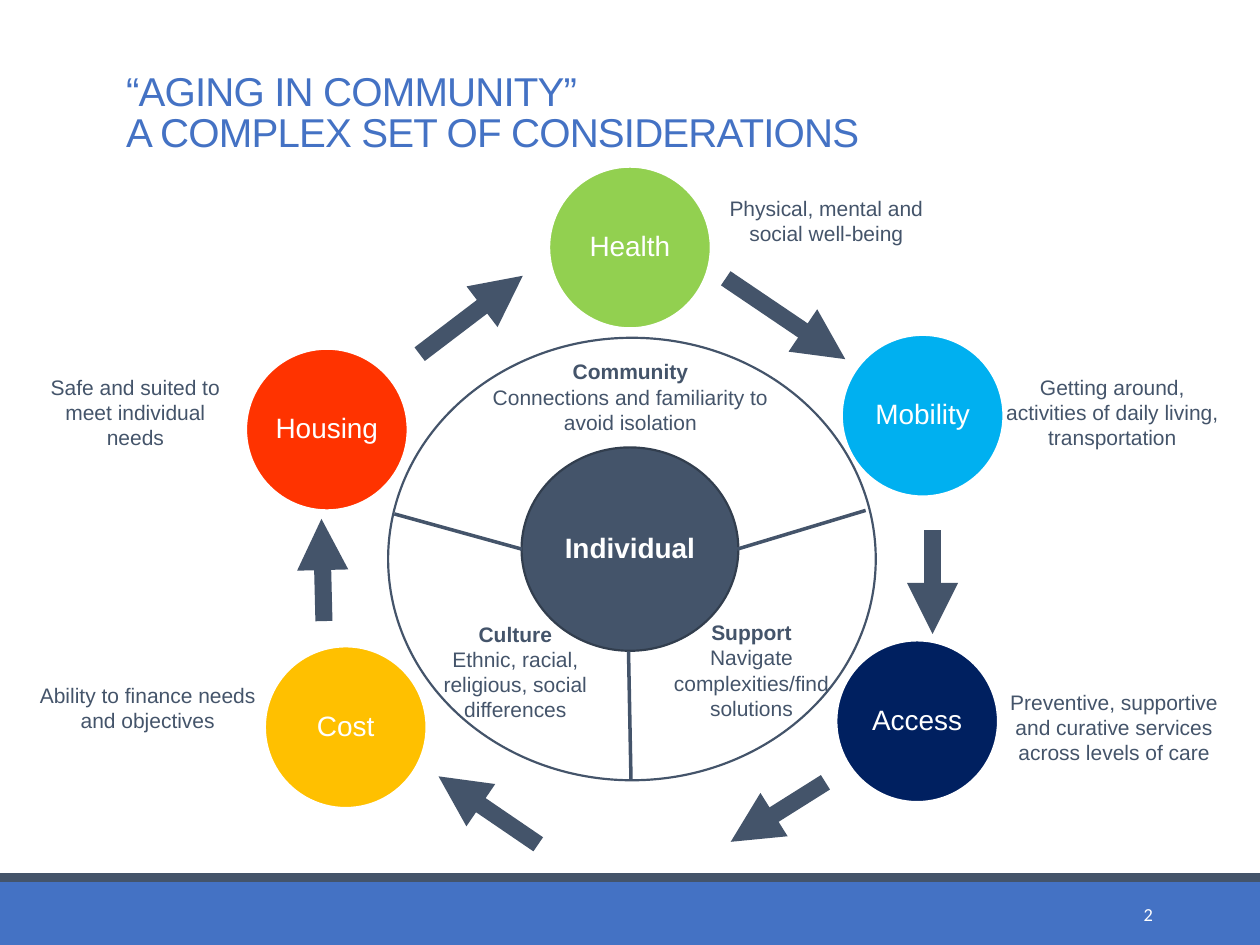
from lxml import etree
from pptx import Presentation
from pptx.dml.color import RGBColor
from pptx.enum.shapes import MSO_CONNECTOR, MSO_SHAPE
from pptx.enum.text import MSO_ANCHOR, MSO_AUTO_SIZE, PP_ALIGN
from pptx.oxml.ns import qn
from pptx.util import Cm, Pt

STRAIGHT = MSO_CONNECTOR.STRAIGHT
OVAL, RECTANGLE = MSO_SHAPE.OVAL, MSO_SHAPE.RECTANGLE
TOP, MIDDLE = MSO_ANCHOR.TOP, MSO_ANCHOR.MIDDLE
CENTER, LEFT, RIGHT = PP_ALIGN.CENTER, PP_ALIGN.LEFT, PP_ALIGN.RIGHT
NO_AUTOFIT = MSO_AUTO_SIZE.NONE
SLATE, BLUE, WHITE = "44546A", "4472C4", "FFFFFF"


def color(hex_string):
    return RGBColor.from_string(hex_string)


def format_text(para, size, hex_color, align=CENTER, bold=False, name="Arial"):
    para.alignment = align
    para.font.name = name
    para.font.size = Pt(size)
    para.font.bold = bold
    para.font.color.rgb = color(hex_color)


deck = Presentation()
deck.slide_width, deck.slide_height = Cm(25.4), Cm(19.05)
slide = deck.slides.add_slide(deck.slide_layouts[5])
shapes = slide.shapes

# Title
title = shapes.title
title.left, title.top, title.width, title.height = Cm(2.29), Cm(1.35), Cm(20.96), Cm(2.13)
frame = title.text_frame
frame.text = "“AGING IN COMMUNITY”\vA COMPLEX SET OF CONSIDERATIONS"
frame.vertical_anchor = TOP
frame.auto_size = NO_AUTOFIT
para = frame.paragraphs[0]
para.line_spacing = 0.85
format_text(para, 23, BLUE, LEFT)
para.font._element.set("spc", "-50")

# Footer bars and page number
for top, height, fill in [(17.78, 1.27, BLUE), (17.6, 0.18, SLATE)]:
    bar = shapes.add_shape(RECTANGLE, 0, Cm(top), deck.slide_width, Cm(height))
    bar.shadow.inherit = False
    bar.fill.solid()
    bar.fill.fore_color.rgb = color(fill)
    bar.line.fill.background()
page_number = shapes.add_textbox(Cm(20.75), Cm(17.91), Cm(2.74), Cm(1.02))
page_number.text_frame.text = "2"
page_number.text_frame.vertical_anchor = MIDDLE
format_text(page_number.text_frame.paragraphs[0], 10.5, WHITE, RIGHT, name="Calibri")

# Ring, individual and the five considerations: label, centre, size, fill, outline
circles = [
    ("", 12.74, 11.27, 9.83, 8.92, WHITE, SLATE),
    ("Individual", 12.7, 11.07, 4.37, 4.1, SLATE, "323E4E"),
    ("Health", 12.7, 4.99, 3.26, 3.26, "92D050", WHITE),
    ("Mobility", 18.6, 8.38, 3.26, 3.26, "00B0F0", WHITE),
    ("Access", 18.49, 14.54, 3.26, 3.26, "002060", WHITE),
    ("Cost", 6.97, 14.66, 3.26, 3.26, "FFC000", WHITE),
    ("Housing", 6.59, 8.66, 3.26, 3.26, "FF3300", WHITE),
]
for label, x, y, width, height, fill, outline in circles:
    circle = shapes.add_shape(OVAL, Cm(x - width / 2), Cm(y - height / 2), Cm(width), Cm(height))
    circle.shadow.inherit = False
    circle.fill.solid()
    circle.fill.fore_color.rgb = color(fill)
    circle.line.color.rgb = color(outline)
    circle.line.width = Pt(1.25)
    if label:
        frame = circle.text_frame
        frame.margin_left = frame.margin_right = frame.margin_top = frame.margin_bottom = 0
        frame.vertical_anchor = MIDDLE
        frame.text = label
        frame.paragraphs[0].line_spacing = 0.9
        format_text(frame.paragraphs[0], 16, WHITE, bold=label == "Individual")

# Arrows around the cycle, then spokes inside the ring: start, end
arrows = [
    (14.63, 5.61, 17.04, 7.24),
    (18.8, 10.69, 18.8, 12.78),
    (16.64, 15.77, 14.73, 16.97),
    (10.85, 17.02, 8.84, 15.65),
    (6.53, 12.52, 6.48, 10.46),
    (8.46, 7.14, 10.54, 5.56),
]
spokes = [
    (10.52, 11.07, 7.95, 10.36),
    (14.86, 11.07, 17.45, 10.29),
    (12.67, 13.13, 12.72, 15.72),
]
for ends in arrows + spokes:
    line = shapes.add_connector(STRAIGHT, *[Cm(value) for value in ends])
    line.line.color.rgb = color(SLATE)
    line.line.width = Pt(9.75 if ends in arrows else 2)
    if ends in arrows:
        etree.SubElement(line.line._get_or_add_ln(), qn("a:tailEnd"), type="triangle")
    etree.SubElement(line._element.spPr, qn("a:effectLst"))

# Notes: heading, text, left, top, width, height
notes = [
    ("", "Physical, mental and social well-being", 14.27, 3.81, 4.78, 1.27),
    ("", "Getting around, activities of daily living, transportation", 19.91, 7.42, 5.03, 1.8),
    ("", "Preventive, supportive and curative services across levels of care",
     19.96, 13.77, 5, 1.8),
    ("", "Ability to finance needs and objectives", 0.48, 13.64, 5, 1.27),
    ("", "Safe and suited to meet individual needs", 0.71, 7.42, 4.04, 1.8),
    ("Community", "Connections and familiarity to avoid isolation", 9.14, 7.11, 7.14, 1.8),
    ("Culture", "Ethnic, racial, religious, social differences", 8.46, 12.4, 3.86, 2.31),
    ("Support", "Navigate complexities/find solutions", 13.08, 12.37, 4.14, 2.82),
]
for heading, text, *place in notes:
    box = shapes.add_textbox(*[Cm(value) for value in place])
    frame = box.text_frame
    frame.word_wrap = True
    frame.text = f"{heading}\n{text}" if heading else text
    for para in frame.paragraphs:
        format_text(para, 12, SLATE, bold=para.text == heading)

deck.save("out.pptx")
